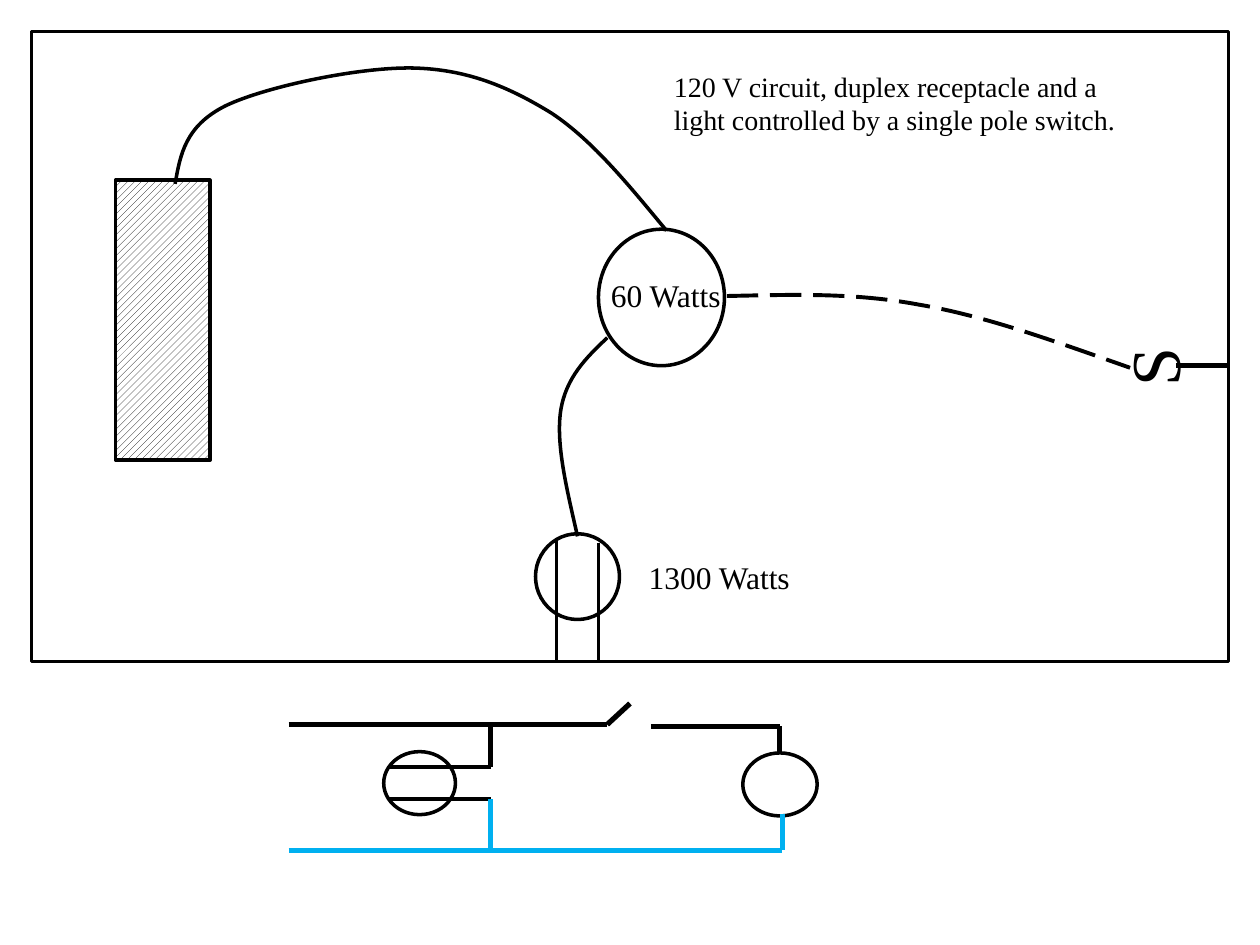
import pptx
import pptx.dml.color
import pptx.enum.dml
import pptx.enum.shapes
import pptx.enum.text
import pptx.oxml
import pptx.oxml.ns
import pptx.util

Pt = pptx.util.Pt
BLACK = pptx.dml.color.RGBColor(0, 0, 0)
WHITE = pptx.dml.color.RGBColor(255, 255, 255)
NEUTRAL_BLUE = pptx.dml.color.RGBColor(0, 0xB0, 0xF0)
OVAL = pptx.enum.shapes.MSO_SHAPE.OVAL
RECTANGLE = pptx.enum.shapes.MSO_SHAPE.RECTANGLE
LONG_DASH = pptx.enum.dml.MSO_LINE.LONG_DASH

presentation = pptx.Presentation()
presentation.slide_width = Pt(720)
presentation.slide_height = Pt(540)
slide = presentation.slides.add_slide(presentation.slide_layouts[6])
shapes = slide.shapes


def draw_line(part, color=BLACK, width=2):
    part.line.color.rgb = color
    part.line.width = Pt(width)
    part._element.spPr.append(pptx.oxml.parse_xml(
        f'<a:effectLst {pptx.oxml.ns.nsdecls("a")}/>'))


def add_text(text, left, top, width, height, size=18, rotation=0):
    label = shapes.add_textbox(Pt(left), Pt(top), Pt(width), Pt(height))
    label.rotation = rotation
    label.text_frame.word_wrap = True
    label.text_frame.auto_size = pptx.enum.text.MSO_AUTO_SIZE.SHAPE_TO_FIT_TEXT
    run = label.text_frame.paragraphs[0].add_run()
    run.text = text
    run.font.name = "Times New Roman"
    run.font.size = Pt(size)
    run.font.color.rgb = BLACK


outlines = []
for kind, left, top, width, height, rotation in [
    (OVAL, 342, 131, 72, 78, 0),
    (RECTANGLE, 18, 18, 684, 360, 0),
    (RECTANGLE, 66, 103, 54, 160, 0),
    (OVAL, 306, 305, 48, 49, 0),
    (OVAL, 427.7, 427, 36, 42.5, 270),
    (OVAL, 221.8, 427, 36, 41, 270),
]:
    outline = shapes.add_shape(kind, Pt(left), Pt(top), Pt(width), Pt(height))
    outline.rotation = rotation
    outline.fill.background()
    draw_line(outline)
    outlines.append(outline)

lamp, room, panel = outlines[:3]
lamp.fill.solid()
lamp.fill.fore_color.rgb = WHITE
panel.fill.patterned()
panel.fill.pattern = pptx.enum.dml.MSO_PATTERN.WIDE_UPWARD_DIAGONAL
panel.fill.fore_color.rgb = BLACK
panel.fill.back_color.rgb = WHITE

for x1, y1, x2, y2, color, width in [
    (318, 309, 318, 378.5, BLACK, 2.25),
    (342, 310.5, 342, 378.5, BLACK, 2.25),
    (672, 209, 702, 209, BLACK, 3),
    (222, 456.5, 280.5, 456.5, BLACK, 2.25),
    (223, 438.5, 280.5, 438.5, BLACK, 2.25),
    (165, 414, 347, 414, BLACK, 3),
    (165, 486, 447, 486, NEUTRAL_BLUE, 3),
    (445.5, 415, 445.5, 430.5, BLACK, 3),
    (447, 465, 447, 485.5, NEUTRAL_BLUE, 3),
    (280.5, 414, 280.5, 438.5, BLACK, 3),
    (280.5, 456.5, 280.5, 486, NEUTRAL_BLUE, 3),
    (347, 414, 360, 402, BLACK, 3),
    (372, 415, 445.5, 415, BLACK, 3),
]:
    wire = shapes.add_connector(
        pptx.enum.shapes.MSO_CONNECTOR.STRAIGHT, Pt(x1), Pt(y1), Pt(x2), Pt(y2))
    draw_line(wire, color, width)

outlet_cable = [(330, 306.5), (324, 280), (317.5, 254), (320.4, 234.7),
                (323.3, 216), (334.8, 204.5), (347, 193)]
switch_cable = [(415.4, 169.2), (451.4, 168.5), (487.4, 167), (525.6, 174.2),
                (563.8, 180.7), (604.8, 195.8), (645.8, 210.2)]
panel_cable = [(100.1, 105.1), (103, 88.6), (105.8, 72), (128.9, 60.5),
               (151.2, 49.7), (205.2, 38.2), (236.2, 38.9),
               (267.1, 39.6), (290.9, 49.7), (315.4, 64.8),
               (339.1, 80.6), (360, 106.6), (380.9, 131.8)]
for points, width, dash in [
    (outlet_cable, 2, None), (switch_cable, 2.25, LONG_DASH), (panel_cable, 2, None)
]:
    start, *controls = [(Pt(x), Pt(y)) for x, y in points]
    builder = shapes.build_freeform(*start)
    builder.add_line_segments(controls, close=False)
    cable = builder.convert_to_shape()
    cable.fill.background()
    draw_line(cable, width=width)
    cable.line.dash_style = dash
    segments = cable._element.findall(".//" + pptx.oxml.ns.qn("a:lnTo"))
    for first in range(0, len(segments), 3):
        curve = pptx.oxml.parse_xml(f'<a:cubicBezTo {pptx.oxml.ns.nsdecls("a")}/>')
        segments[first].addprevious(curve)
        for segment in segments[first:first + 3]:
            curve.append(segment[0])
            segment.getparent().remove(segment)

add_text("S", 638, 179.3, 41.8, 55.4, size=40, rotation=270)
add_text("60 Watts", 342, 154, 81.5, 29)
add_text("1300 Watts", 363.6, 315.5, 98.6, 29)
add_text("120 V circuit, duplex receptacle and a light controlled by a single pole switch.",
         378, 36, 288, 46, size=16)

presentation.save("out.pptx")
